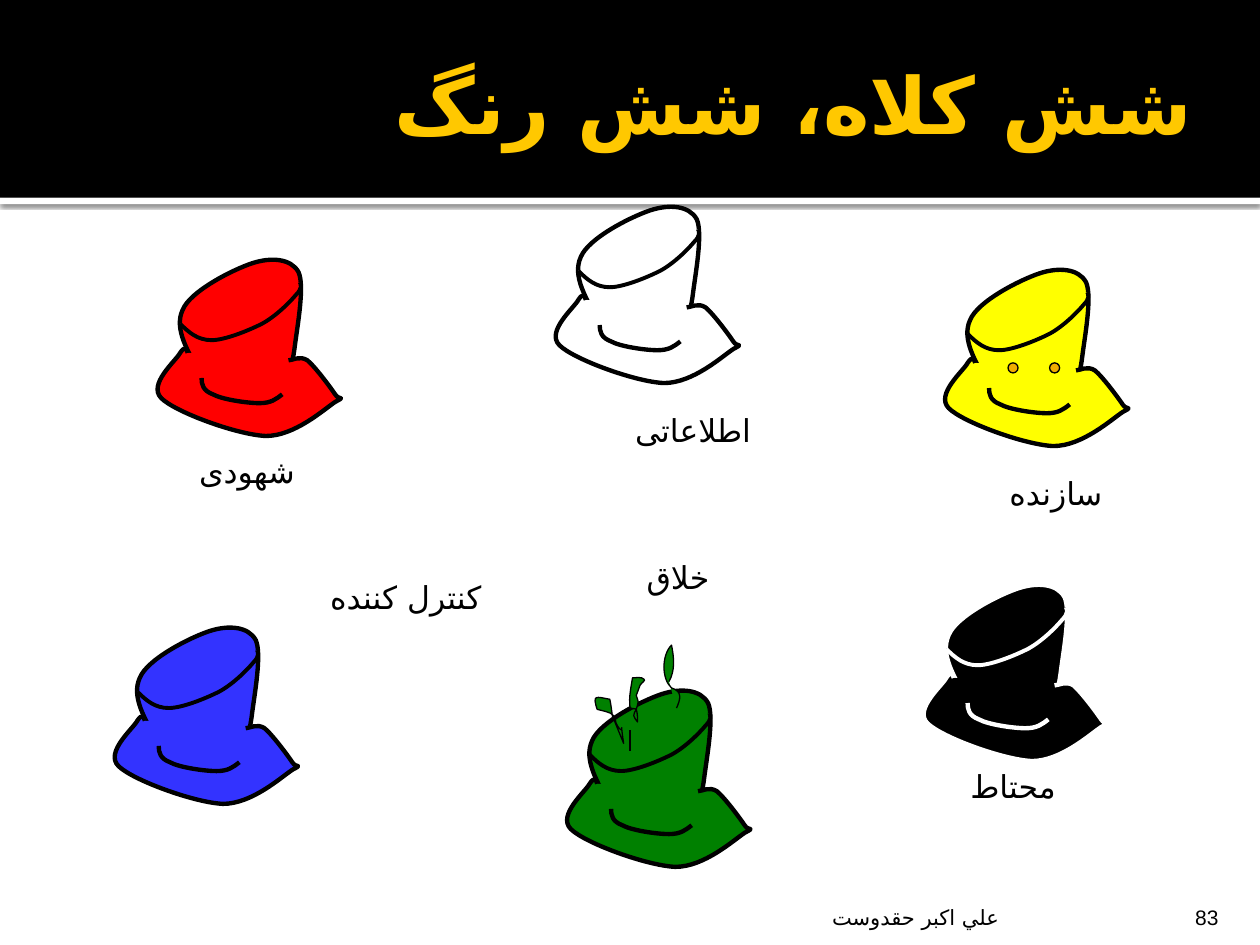
from lxml.etree import SubElement
from pptx import Presentation
from pptx.dml.color import RGBColor
from pptx.enum.shapes import MSO_CONNECTOR, MSO_SHAPE
from pptx.enum.text import MSO_ANCHOR, MSO_AUTO_SIZE, PP_ALIGN
from pptx.oxml.ns import qn
from pptx.util import Inches, Pt

BLACK = RGBColor(0x00, 0x00, 0x00)
WHITE = RGBColor(0xFF, 0xFF, 0xFF)
RED = RGBColor(0xFF, 0x00, 0x00)
BLUE = RGBColor(0x33, 0x33, 0xFF)
GREEN = RGBColor(0x00, 0x80, 0x00)
YELLOW = RGBColor(0xFF, 0xFF, 0x00)
GOLD = RGBColor(0xFF, 0xC8, 0x00)
ORANGE = RGBColor(0xF0, 0xAD, 0x00)
PERSIAN_FONT = "DejaVu Sans"

presentation = Presentation()
presentation.slide_width = Inches(10)
presentation.slide_height = Inches(7.5)
# All lengths below count cells of a grid with 1000 columns and 750 rows.
CELL = presentation.slide_width // 1000

# Each curve is a start point followed by triples: two handles and an end point.
CROWN = [(43, 94), (32, 75), (21, 57), (28, 42), (34, 27), (68, 10), (83, 5),
         (98, 0), (114, 1), (120, 12), (125, 23), (119, 55), (117, 71),
         (115, 88), (109, 104), (107, 111)]
BRIM = [(32, 76), (31, 73), (30, 70), (26, 76), (23, 82), (0, 101), (11, 112),
        (22, 123), (71, 141), (94, 142), (117, 142), (140, 121), (149, 115),
        (158, 110), (152, 114), (149, 109), (145, 103), (133, 87), (127, 82),
        (121, 78), (115, 82), (112, 82)]
SMILE = [(43, 96), (43, 101), (44, 106), (52, 109), (59, 113), (79, 116), (89, 116),
         (98, 116), (102, 113), (107, 109)]
CREASE = [(26, 53), (33, 60), (40, 66), (51, 66), (61, 66), (79, 59), (91, 53),
          (102, 47), (113, 36), (118, 30), (123, 25), (122, 22), (121, 20)]
HAT_PARTS = [(CROWN, 2.5), (BRIM, 2.5), (SMILE, 2.5), (CREASE, 2.25)]

LEFT_SPROUT = [(495, 590), (491, 564), (497, 589), (489, 574), (488, 572), (489, 570),
               (487, 568), (485, 565), (477, 564), (474, 563), (470, 551), (473, 553),
               (484, 555), (485, 559), (486, 568), (486, 568)]
MIDDLE_SPROUT = [(506, 573), (506, 570), (506, 566), (505, 563), (504, 562), (500, 563),
                 (500, 561), (499, 553), (501, 545), (502, 538), (505, 538), (509, 537),
                 (511, 539), (513, 540), (509, 542), (508, 544), (507, 547), (506, 549),
                 (505, 552), (507, 558), (507, 556), (505, 563), (504, 565), (503, 566),
                 (503, 568), (503, 570), (505, 571), (506, 573)]
RIGHT_SPROUT = [(537, 562), (540, 555), (542, 549), (533, 546), (525, 539), (525, 520),
                (533, 512), (535, 522), (536, 532), (531, 541)]


def add_curve(shapes, points, fill, line=BLACK, width=0.75, left=0, top=0, close=False):
    """Draw a chain of Bezier curves as one freeform."""
    builder = shapes.build_freeform(*points[0], scale=CELL)
    builder.add_line_segments(points[1:], close=close)
    shape = builder.convert_to_shape(left * CELL, top * CELL)
    segments = list(shape._element.iter(qn("a:lnTo")))
    for index in range(0, len(segments), 3):
        curve = segments[index]
        curve.tag = qn("a:cubicBezTo")
        for segment in segments[index + 1:index + 3]:
            curve.append(segment[0])
            segment.getparent().remove(segment)
    shape.shadow.inherit = False
    shape.fill.solid()
    shape.fill.fore_color.rgb = fill
    shape.line.color.rgb = line
    shape.line.width = Pt(width)


def write_text(shape, text, size=18, font="Arial", color=BLACK, bold=False, rtl=True,
               align=PP_ALIGN.CENTER, anchor=MSO_ANCHOR.TOP, insets=(10, 5, 10, 5),
               auto_size=MSO_AUTO_SIZE.NONE):
    frame = shape.text_frame
    frame.word_wrap = True
    frame.auto_size = auto_size
    frame.vertical_anchor = anchor
    (frame.margin_left, frame.margin_top,
     frame.margin_right, frame.margin_bottom) = [inset * CELL for inset in insets]
    paragraph = frame.paragraphs[0]
    paragraph.alignment = align
    run = paragraph.add_run()
    run.text = text
    run.font.size = Pt(size)
    run.font.bold = bold
    run.font.color.rgb = color
    run.font.name = font
    if rtl:
        paragraph._p.get_or_add_pPr().set("rtl", "1")
        SubElement(run._r.get_or_add_rPr(), qn("a:cs"), typeface=PERSIAN_FONT)


slide = presentation.slides.add_slide(presentation.slide_layouts[5])
shapes = slide.shapes

# Header bands, placed behind the title
for position, (top, height, color) in enumerate([(157, 5, WHITE), (0, 157, BLACK)]):
    band = shapes.add_shape(MSO_SHAPE.RECTANGLE, 0, top * CELL,
                            presentation.slide_width, height * CELL)
    band.shadow.inherit = False
    band.fill.solid()
    band.fill.fore_color.rgb = color
    band.line.fill.background()
    shapes._spTree.insert(2 + position, band._element)
    if color == WHITE:
        effects = band._element.spPr.find(qn("a:effectLst"))
        shadow = SubElement(effects, qn("a:outerShdw"), blurRad=str(Pt(2.5)),
                            dist=str(Pt(0.8)), dir="5400000", rotWithShape="0")
        shadow_color = SubElement(shadow, qn("a:srgbClr"), val="000000")
        SubElement(shadow_color, qn("a:alpha"), val="60000")

title = shapes.title
title.left, title.top, title.width, title.height = [
    cells * CELL for cells in (78, 23, 873, 117)]
write_text(title, "شش کلاه، شش رنگ", size=45, font="Calibri", color=GOLD, bold=True,
           align=PP_ALIGN.RIGHT, anchor=MSO_ANCHOR.MIDDLE, insets=(10, 5, 5, 5))

# Six hats
hat_shapes = {}
for left, top, fill, line in [
    (117, 204, RED, BLACK), (433, 162, WHITE, BLACK), (83, 496, BLUE, BLACK),
    (725, 462, BLACK, WHITE), (442, 546, GREEN, BLACK), (742, 212, YELLOW, BLACK),
]:
    hat_shapes[fill] = shapes.add_group_shape().shapes
    for points, width in HAT_PARTS:
        add_curve(hat_shapes[fill], points, fill, line, width, left, top)

# Sprouts on the green hat
stem = hat_shapes[GREEN].add_connector(
    MSO_CONNECTOR.STRAIGHT, 500 * CELL, 596 * CELL, 500 * CELL, 579 * CELL)
stem.line.color.rgb = BLACK
stem.line.width = Pt(0.75)
SubElement(stem._element.spPr, qn("a:effectLst"))
for points, close in [(LEFT_SPROUT, True), (MIDDLE_SPROUT, True), (RIGHT_SPROUT, False)]:
    add_curve(hat_shapes[GREEN], points, GREEN, close=close)

# Eyes on the yellow hat
for left in (800, 833):
    eye = hat_shapes[YELLOW].add_shape(
        MSO_SHAPE.OVAL, left * CELL, 288 * CELL, 8 * CELL, 8 * CELL)
    eye.shadow.inherit = False
    eye.fill.solid()
    eye.fill.fore_color.rgb = ORANGE
    eye.line.color.rgb = BLACK
    eye.line.width = Pt(0.75)

for text, left, top, width, align in [
    ("شهودی", 117, 354, 158, PP_ALIGN.CENTER),
    ("اطلاعاتی", 450, 321, 200, PP_ALIGN.CENTER),
    ("سازنده", 742, 371, 192, PP_ALIGN.CENTER),
    ("محتاط", 708, 604, 192, PP_ALIGN.CENTER),
    ("خلاق", 442, 438, 192, PP_ALIGN.CENTER),
    ("کنترل کننده", 175, 454, 217, PP_ALIGN.RIGHT),
]:
    label = shapes.add_textbox(left * CELL, top * CELL, width * CELL, 40 * CELL)
    write_text(label, text, align=align, auto_size=MSO_AUTO_SIZE.SHAPE_TO_FIT_TEXT)

for text, left, width, side_inset, font, rtl in [
    ("علي اكبر حقدوست", 188, 610, 5, "Calibri", True),
    ("83", 897, 80, 10, "Arial", False),
]:
    footer = shapes.add_textbox(left * CELL, 708 * CELL, width * CELL, 30 * CELL)
    write_text(footer, text, size=12, font=font, rtl=rtl, align=PP_ALIGN.RIGHT,
               anchor=MSO_ANCHOR.BOTTOM, insets=(side_inset, 5, side_inset, 0))

presentation.save("out.pptx")
